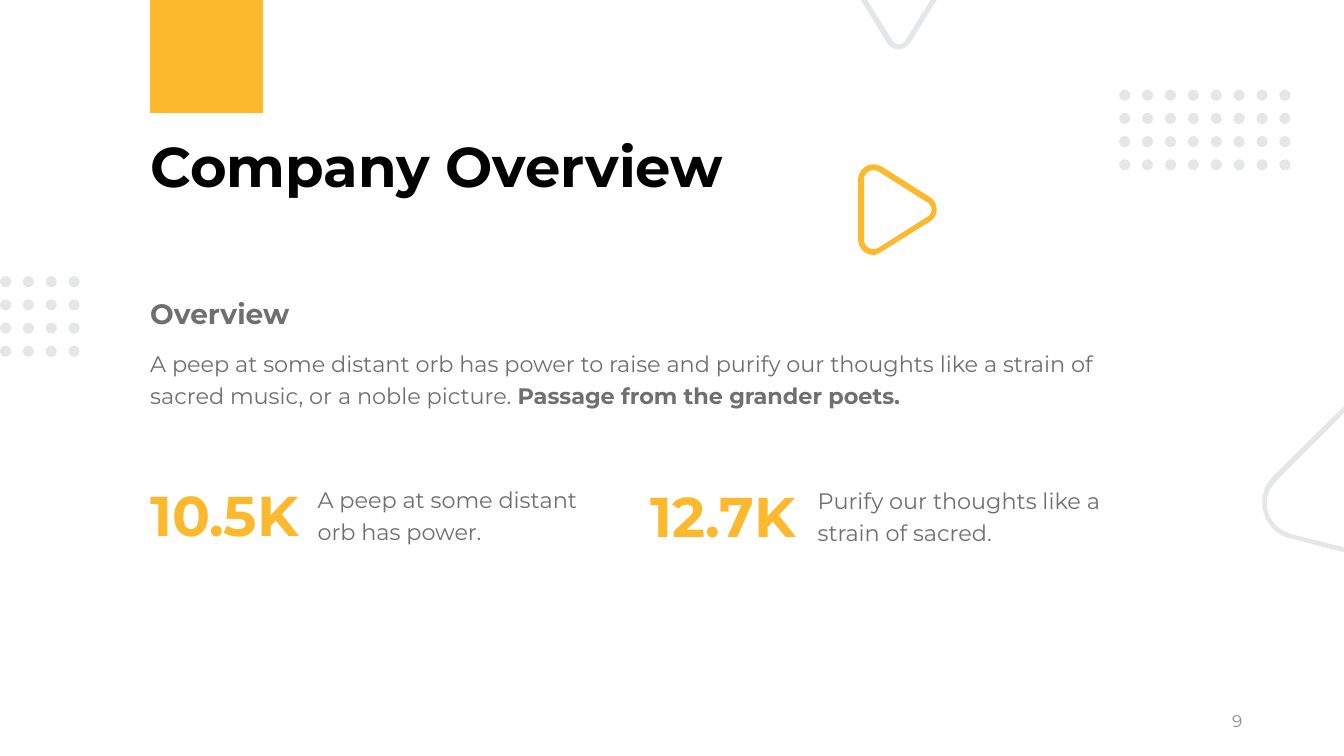
import math
from collections import namedtuple

from lxml import etree
from pptx import Presentation
from pptx import util as u
from pptx.dml.color import RGBColor
from pptx.enum import shapes, text
from pptx.oxml import ns

PX = u.Inches(1) // 100
FONT = "Montserrat"
YELLOW = RGBColor(0xFD, 0xB9, 0x2E)
BLACK = RGBColor(0x00, 0x00, 0x00)
GRAY = RGBColor(0x6F, 0x6F, 0x70)
NUMBER_GRAY = RGBColor(0x8C, 0x8C, 0x8C)
PALE = RGBColor(0xE5, 0xE6, 0xE7)
DOT = 11
CURVE_STEPS = 5
QUARTER_TURN = 90 * 60000

Box = namedtuple("Box", "left top width height")

TOP_TRIANGLE = [
    [(0, 0), (26, 43), (29, 47, 33, 49, 38, 49), (42, 49, 46, 46, 49, 42),
     (75, 0), (69, 0), (44, 40), (43, 42, 40, 44, 38, 44),
     (35, 44, 32, 42, 31, 40), (6, 0)],
]
RIGHT_TRIANGLE = [
    [(85, 145), (32, 131), (25, 130, 19, 126, 14, 121),
     (0, 107, 0, 84, 14, 70), (85, 0), (85, 7), (18, 74),
     (5, 86, 5, 106, 17, 118), (21, 122, 27, 125, 33, 127), (85, 140)],
]
PLAY_TRIANGLE = [
    [(23, 2), (72, 33), (76, 36, 78, 40, 78, 45), (78, 50, 76, 54, 71, 57),
     (23, 87), (20, 89, 18, 90, 15, 90), (7, 90, 0, 83, 0, 75),
     (0, 15), (0, 7, 7, 0, 15, 0), (18, 0, 20, 1, 23, 2)],
    [(20, 7), (18, 6, 17, 6, 15, 6), (10, 6, 6, 10, 6, 15), (6, 75),
     (6, 80, 10, 84, 15, 84), (17, 84, 18, 84, 20, 83), (69, 52),
     (71, 51, 73, 48, 73, 45), (73, 42, 71, 39, 69, 38)],
]


def emu(box):
    return [length * PX for length in box]


def paint(shape, color):
    shape.fill.solid()
    shape.fill.fore_color.rgb = color
    shape.line.fill.background()
    shape.shadow.inherit = False


def add_span(para, words, size=16, color=GRAY, bold=False):
    span = para.add_run()
    span.text = words
    span.font.name = FONT
    span.font.size = u.Pt(size)
    span.font.color.rgb = color
    span.font.bold = bold


def prepare_frame(frame, wrap=True):
    frame.margin_left = frame.margin_right = 0
    frame.margin_top = frame.margin_bottom = 0
    frame.word_wrap = wrap
    frame.auto_size = text.MSO_AUTO_SIZE.SHAPE_TO_FIT_TEXT
    frame.vertical_anchor = text.MSO_ANCHOR.TOP


def space_para(para):
    para.line_spacing = 1.2
    para.space_before = u.Pt(10)
    return para


def add_frame(parent, box):
    frame = parent.add_textbox(*emu(box)).text_frame
    prepare_frame(frame)
    space_para(frame.paragraphs[0])
    return frame


def flatten(contour):
    points = [contour[0]]
    for step in contour[1:]:
        if len(step) == 2:
            points.append(step)
            continue
        corners = [points[-1], step[0:2], step[2:4], step[4:6]]
        for index in range(1, CURVE_STEPS + 1):
            t = index / CURVE_STEPS
            weights = [math.comb(3, k) * t**k * (1 - t)**(3 - k) for k in range(4)]
            points.append(tuple(
                sum(weight * corner[axis] for weight, corner in zip(weights, corners))
                for axis in (0, 1)))
    return points


def add_outline(page, box, contours, color):
    builder = None
    for contour in contours:
        points = [((box.left + x) * PX, (box.top + y) * PX) for x, y in flatten(contour)]
        if builder is None:
            builder = page.shapes.build_freeform(*points[0])
        else:
            builder.move_to(*points[0])
        builder.add_line_segments(points[1:], close=False)
        builder.add_line_segments([], close=True)
    outline = builder.convert_to_shape()
    paint(outline, color)
    return outline


def add_dots(page, box, columns, rows):
    radius = DOT / 2
    across = (box.width - DOT) / (columns - 1)
    down = (box.height - DOT) / (rows - 1)
    quarters = [(0, radius), (radius, 0), (DOT, radius), (radius, DOT), (0, radius)]
    diamonds = [
        [(column * across + x, row * down + y) for x, y in quarters]
        for row in range(rows) for column in range(columns)
    ]
    dots = add_outline(page, box, diamonds, PALE)
    sides = list(dots.element.iter(ns.qn("a:lnTo")))
    for index, side in enumerate(sides):
        arc = etree.Element(ns.qn("a:arcTo"))
        arc.set("wR", str(round(radius * PX)))
        arc.set("hR", str(round(radius * PX)))
        arc.set("stAng", str((index + 2) % 4 * QUARTER_TURN))
        arc.set("swAng", str(QUARTER_TURN))
        side.getparent().replace(side, arc)


def add_header(page, box):
    square = page.shapes.add_shape(
        shapes.MSO_SHAPE.RECTANGLE, *emu((box.left, box.top, 112, 112)))
    paint(square, YELLOW)
    title = page.shapes.title
    title.left, title.top, title.width, title.height = emu(
        (box.left, box.top + 138, box.width, box.height - 138))
    prepare_frame(title.text_frame, wrap=False)
    para = title.text_frame.paragraphs[0]
    para.alignment = text.PP_ALIGN.LEFT
    para.line_spacing = 0.9
    add_span(para, "Company Overview", size=40, color=BLACK, bold=True)


def add_overview(page, box):
    frame = add_frame(page.shapes, box)
    add_span(frame.paragraphs[0], "Overview", size=20, bold=True)
    para = space_para(frame.add_paragraph())
    add_span(para, "A peep at some distant orb has power to raise and purify "
                   "our thoughts like a strain of sacred music, or a noble picture. ")
    add_span(para, "Passage from the grander poets.", bold=True)


def add_stat(page, box, figure, caption):
    group = page.shapes.add_group_shape().shapes
    number = add_frame(group, Box(box.left, box.top, 156, 74))
    add_span(number.paragraphs[0], figure, size=40, color=YELLOW, bold=True)
    label = add_frame(
        group, Box(box.left + 166, box.top + 14, box.width - 166, box.height - 14))
    add_span(label.paragraphs[0], caption)


def add_page_number(page, box):
    frame = page.shapes.add_textbox(*emu(box)).text_frame
    frame.word_wrap = True
    frame.vertical_anchor = text.MSO_ANCHOR.MIDDLE
    para = frame.paragraphs[0]
    para.alignment = text.PP_ALIGN.RIGHT
    add_span(para, "9", size=12, color=NUMBER_GRAY)


def add_decoration(page):
    add_dots(page, Box(1110, 89, 170, 80), columns=8, rows=4)
    add_outline(page, Box(854, 0, 75, 49), TOP_TRIANGLE, PALE)
    add_outline(page, Box(1248, 403, 85, 145), RIGHT_TRIANGLE, PALE)
    add_dots(page, Box(0, 274, 79, 80), columns=4, rows=4)
    add_outline(page, Box(851, 163, 78, 90), PLAY_TRIANGLE, YELLOW)


def main():
    deck = Presentation()
    deck.slide_width, deck.slide_height = 1333 * PX, 750 * PX
    page = deck.slides.add_slide(deck.slide_layouts.get_by_name("Title Only"))
    add_header(page, Box(149, 0, 577, 199))
    add_page_number(page, Box(942, 695, 300, 40))
    add_overview(page, Box(149, 288, 992, 116))
    add_stat(page, Box(149, 463, 435, 76), "10.5K", "A peep at some distant orb has power.")
    add_stat(page, Box(645, 464, 452, 76), "12.7K", "Purify our thoughts like a strain of sacred.")
    add_decoration(page)
    deck.save("out.pptx")


if __name__ == "__main__":
    main()
